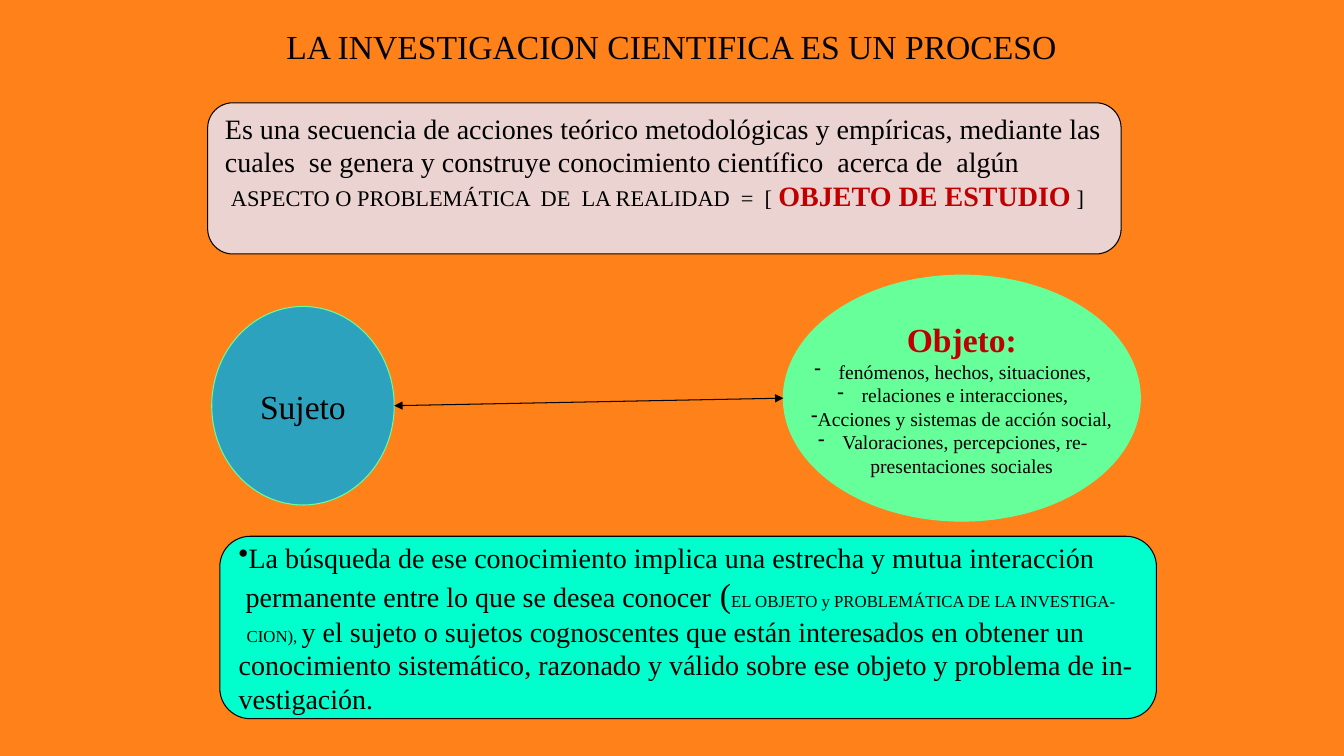
from lxml import etree
from pptx import Presentation
from pptx.dml.color import RGBColor
from pptx.enum.shapes import MSO_CONNECTOR, MSO_SHAPE
from pptx.enum.text import MSO_ANCHOR, PP_ALIGN
from pptx.oxml.ns import qn
from pptx.util import Inches, Pt

ROUNDED_BOX = MSO_SHAPE.FLOWCHART_ALTERNATE_PROCESS
OVAL = MSO_SHAPE.OVAL
STRAIGHT = MSO_CONNECTOR.STRAIGHT
LEFT, CENTER = PP_ALIGN.LEFT, PP_ALIGN.CENTER
TOP, MIDDLE = MSO_ANCHOR.TOP, MSO_ANCHOR.MIDDLE

ORANGE = RGBColor(0xFF, 0x81, 0x19)
PINK = RGBColor(0xEB, 0xD3, 0xD1)
TURQUOISE = RGBColor(0x00, 0xFF, 0xCC)
BLUE = RGBColor(0x2D, 0xA2, 0xBF)
GREEN = RGBColor(0x66, 0xFF, 0x99)
RED = RGBColor(0xC0, 0x00, 0x00)
BLACK = RGBColor(0x00, 0x00, 0x00)
FONT = "Times New Roman"


def piece(text, size=20, color=BLACK, bold=False):
    return text, size, color, bold


def line(*pieces, margin=0, hang=0, bullet=None):
    return pieces, margin, hang, bullet


def write_lines(text_frame, lines, align):
    text_frame.text = "\n".join("" for _ in lines)
    for paragraph, (pieces, margin, hang, bullet) in zip(text_frame.paragraphs, lines):
        paragraph.alignment = align
        properties = paragraph._p.get_or_add_pPr()
        properties.set("marL", str(Inches(margin)))
        properties.set("indent", str(Inches(-hang)))
        if bullet:
            etree.SubElement(properties, qn("a:buChar"), char=bullet)
        for text, size, color, bold in pieces:
            run = paragraph.add_run()
            run.text = text
            run.font.name = FONT
            run.font.size = Pt(size)
            run.font.bold = bold
            run.font.color.rgb = color


def place_title(slide, text):
    title = slide.shapes.title
    title.left, title.top = Inches(2.41), Inches(0.21)
    title.width, title.height = Inches(8.5), Inches(0.5)
    write_lines(title.text_frame, [line(piece(text, 24))], CENTER)
    title.text_frame.vertical_anchor = TOP


def add_panel(slide, kind, box, fill, outline, lines, align, bottom=0.05):
    shape = slide.shapes.add_shape(kind, *(Inches(length) for length in box))
    shape.shadow.inherit = False
    shape.fill.solid()
    shape.fill.fore_color.rgb = fill
    shape.line.color.rgb = outline
    shape.line.width = Pt(0.75)
    text_frame = shape.text_frame
    text_frame.word_wrap = False
    text_frame.vertical_anchor = MIDDLE
    text_frame.margin_bottom = Inches(bottom)
    write_lines(text_frame, lines, align)
    return shape


def add_double_arrow(slide, start, end):
    connector = slide.shapes.add_connector(
        STRAIGHT,
        start.left + start.width, start.top + start.height // 2,
        end.left, end.top + end.height // 2,
    )
    connector.line.color.rgb = BLACK
    connector.line.width = Pt(0.75)
    outline = connector.line._get_or_add_ln()
    for tag in ("a:headEnd", "a:tailEnd"):
        etree.SubElement(outline, qn(tag), type="triangle")
    etree.SubElement(connector._element.spPr, qn("a:effectLst"))


def main():
    presentation = Presentation()
    presentation.slide_width = Inches(13.33)
    presentation.slide_height = Inches(7.5)
    slide = presentation.slides.add_slide(presentation.slide_layouts[5])
    slide.background.fill.solid()
    slide.background.fill.fore_color.rgb = ORANGE

    place_title(slide, "LA INVESTIGACION CIENTIFICA ES UN PROCESO")

    definition = [
        line(piece("Es una secuencia de acciones teórico metodológicas y empíricas, mediante las")),
        line(piece("cuales  se genera y construye conocimiento científico  acerca de  algún")),
        line(
            piece("ASPECTO O PROBLEMÁTICA  DE  LA REALIDAD  =  [ ", 16),
            piece("OBJETO DE ESTUDIO", 20, RED, True),
            piece(" ]", 16),
            margin=0.06,
        ),
    ]
    add_panel(slide, ROUNDED_BOX, (2.06, 1.02, 9.06, 1.5), PINK, BLACK,
              definition, LEFT, bottom=0.38)

    interaction = [
        line(piece("La búsqueda de ese conocimiento implica una estrecha y mutua interacción"),
             bullet="•"),
        line(
            piece("permanente entre lo que se desea conocer"),
            piece(" (", 24),
            piece("EL OBJETO y PROBLEMÁTICA DE LA INVESTIGA-", 12),
            margin=0.07,
        ),
        line(
            piece("CION), ", 12),
            piece("y el sujeto o sujetos cognoscentes que están interesados en obtener un"),
            margin=0.08,
        ),
        line(piece("conocimiento sistemático, razonado y válido sobre ese objeto y problema de in-")),
        line(piece("vestigación.")),
    ]
    add_panel(slide, ROUNDED_BOX, (2.18, 5.32, 9.29, 1.81), TURQUOISE, BLACK,
              interaction, LEFT)

    subject = add_panel(slide, OVAL, (2.1, 3.04, 1.81, 1.97), BLUE, GREEN,
                        [line(piece("Sujeto", 24))], CENTER)

    aspects = [
        ("fenómenos, hechos, situaciones,", 0.24),
        ("relaciones e interacciones,", 0.24),
        ("Acciones y sistemas de acción social,", 0.06),
        ("Valoraciones, percepciones, re-", 0.24),
    ]
    object_lines = [line(piece("Objeto:", 24, RED, True))]
    object_lines += [line(piece(text, 14), margin=0.06, hang=hang, bullet="-")
                     for text, hang in aspects]
    object_lines.append(line(piece("presentaciones sociales", 14)))
    study_object = add_panel(slide, OVAL, (7.77, 2.73, 3.54, 2.44), GREEN, GREEN,
                             object_lines, CENTER)

    add_double_arrow(slide, subject, study_object)
    presentation.save("out.pptx")


if __name__ == "__main__":
    main()
